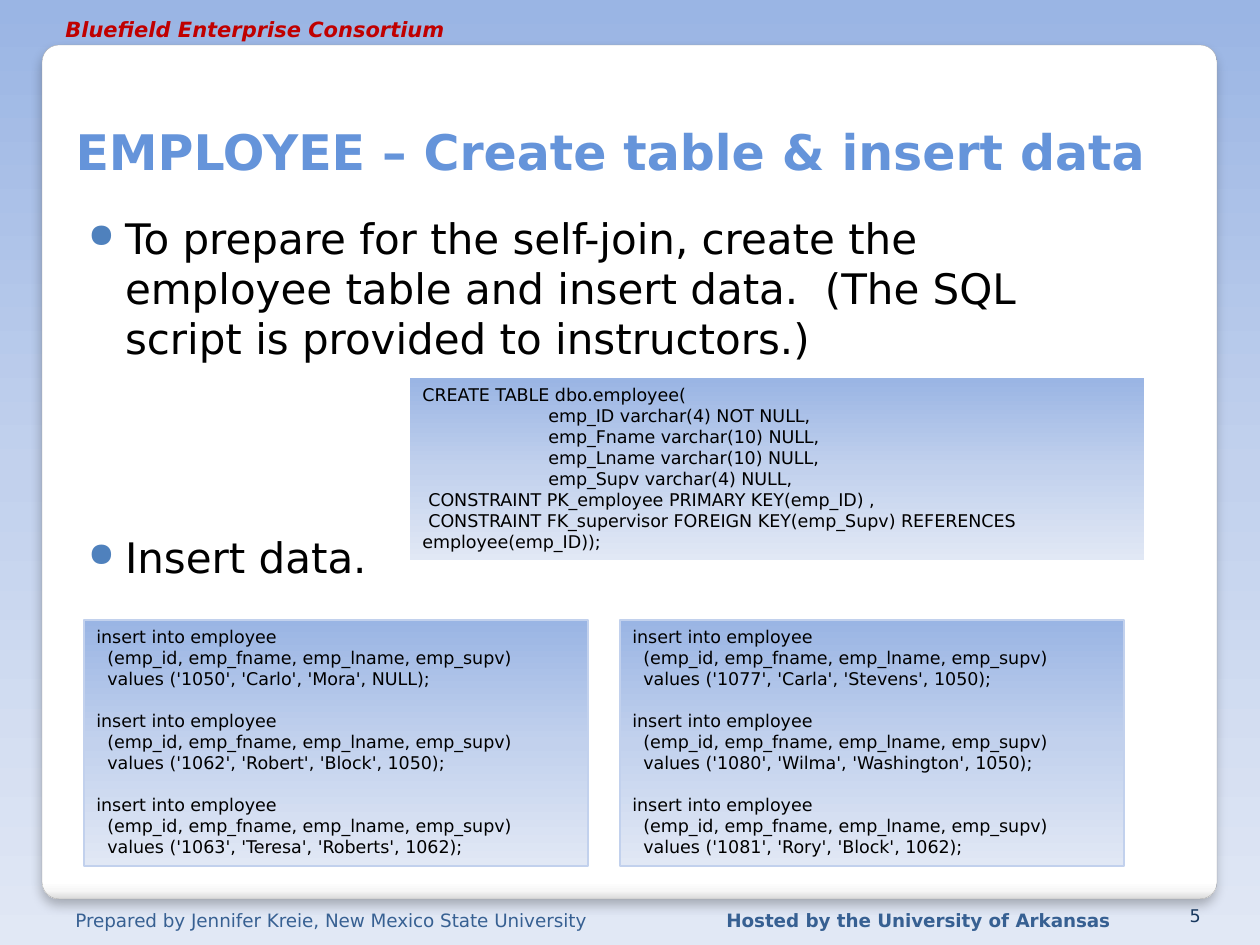
from dataclasses import dataclass

from lxml.etree import SubElement
from pptx import Presentation
from pptx.dml.color import RGBColor
from pptx.enum.shapes import MSO_SHAPE
from pptx.enum.text import MSO_ANCHOR, PP_ALIGN
from pptx.oxml.ns import qn
from pptx.util import Emu, Pt

PX = 914400 / 126
FONT = "DejaVu Sans"
COLORS = {
    "text": "000000",
    "title": "6594DA",
    "header": "C00000",
    "footer": "376092",
    "number": "17375E",
    "bullet": "4F81BD",
    "card_line": "A4A4A4",
    "box_line": "C2D1ED",
}
SKY = [(0, "9AB5E4"), (50, "C2D1ED"), (100, "E1E8F5")]
PAPER = [(0, "FFFFFF"), (98, "FFFFFF"), (99, "F7F7F7"), (100, "DADADA")]


@dataclass
class Box:
    x: int
    y: int
    w: int
    h: int

    def emu(self) -> list[Emu]:
        return [px(v) for v in (self.x, self.y, self.w, self.h)]


@dataclass
class Label:
    text: str
    box: Box
    size: float
    color: str
    bold: bool = False
    italic: bool = False
    align: PP_ALIGN = PP_ALIGN.LEFT
    anchor: MSO_ANCHOR = MSO_ANCHOR.TOP


@dataclass
class Employee:
    id: str
    first: str
    last: str
    supervisor: str


LABELS = [
    Label("Prepared by Jennifer Kreie, New Mexico State University",
          Box(63, 903, 562, 29), 10.5, "footer"),
    Label("Hosted by the University of Arkansas",
          Box(714, 903, 420, 29), 10.5, "footer", bold=True),
    Label("Bluefield Enterprise Consortium",
          Box(53, 10, 420, 29), 12, "header", bold=True, italic=True),
    Label("5", Box(1150, 903, 63, 29), 10, "number",
          align=PP_ALIGN.RIGHT, anchor=MSO_ANCHOR.BOTTOM),
]
COLUMNS = [
    "emp_ID varchar(4) NOT NULL,",
    "emp_Fname varchar(10) NULL,",
    "emp_Lname varchar(10) NULL,",
    "emp_Supv varchar(4) NULL,",
]
CONSTRAINTS = [
    "CONSTRAINT PK_employee PRIMARY KEY(emp_ID) ,",
    "CONSTRAINT FK_supervisor FOREIGN KEY(emp_Supv) REFERENCES employee(emp_ID));",
]
EMPLOYEES = [
    Employee("1050", "Carlo", "Mora", "NULL"),
    Employee("1062", "Robert", "Block", "1050"),
    Employee("1063", "Teresa", "Roberts", "1062"),
    Employee("1077", "Carla", "Stevens", "1050"),
    Employee("1080", "Wilma", "Washington", "1050"),
    Employee("1081", "Rory", "Block", "1062"),
]
PER_BOX = 3


def px(value: float) -> Emu:
    return Emu(round(value * PX))


def rgb(name: str) -> RGBColor:
    return RGBColor.from_string(COLORS[name])


def write(tf, text: str, *, size: float = 10, color: str = "text", bold: bool = False,
          italic: bool = False, align: PP_ALIGN = PP_ALIGN.LEFT, before: float = 0,
          left: int = 0, first: int = 0, bullet: bool = False) -> None:
    p = tf.paragraphs[0] if not tf.paragraphs[0].runs else tf.add_paragraph()
    p.alignment = align
    p.space_before = Pt(before)
    pPr = p._p.get_or_add_pPr()
    pPr.set("marL", str(px(left)))
    pPr.set("indent", str(px(first)))
    if bullet:
        clr = SubElement(pPr, qn("a:buClr"))
        SubElement(clr, qn("a:srgbClr"), val=COLORS["bullet"])
        SubElement(pPr, qn("a:buSzPct"), val="80000")
        SubElement(pPr, qn("a:buChar"), char="●")
    r = p.add_run()
    r.text = text
    r.font.name = FONT
    r.font.size = Pt(size)
    r.font.bold = bold
    r.font.italic = italic
    r.font.color.rgb = rgb(color)


def fill_gradient(fill, element, stops: list[tuple[int, str]]) -> None:
    fill.gradient()
    fill.gradient_angle = 270
    gs_list = element.find(".//" + qn("a:gsLst"))
    for gs in list(gs_list):
        gs_list.remove(gs)
    for position, color in stops:
        gs = SubElement(gs_list, qn("a:gs"), pos=str(position * 1000))
        SubElement(gs, qn("a:srgbClr"), val=color)


def add_panel(s, box: Box, stops: list[tuple[int, str]], line: str | None = None,
              width: float = 0.75, kind: MSO_SHAPE = MSO_SHAPE.RECTANGLE):
    sp = s.shapes.add_shape(kind, *box.emu())
    sp.shadow.inherit = False
    fill_gradient(sp.fill, sp._element.spPr, stops)
    if line:
        sp.line.color.rgb = rgb(line)
        sp.line.width = Pt(width)
    else:
        sp.line.fill.background()
    sp.text_frame.word_wrap = True
    sp.text_frame.vertical_anchor = MSO_ANCHOR.TOP
    return sp


def add_text_frame(s, box: Box, anchor: MSO_ANCHOR = MSO_ANCHOR.TOP):
    tf = s.shapes.add_textbox(*box.emu()).text_frame
    tf.word_wrap = True
    tf.vertical_anchor = anchor
    return tf


def add_card(s) -> None:
    sp = add_panel(s, Box(42, 45, 1175, 854), PAPER, "card_line", 0.16,
                   MSO_SHAPE.ROUNDED_RECTANGLE)
    sp.adjustments[0] = 0.02
    effects = sp._element.spPr.find(qn("a:effectLst"))
    shadow = SubElement(effects, qn("a:outerShdw"), blurRad=str(Pt(6)), dist=str(Pt(4)),
                        dir="5400000", rotWithShape="0")
    clr = SubElement(shadow, qn("a:srgbClr"), val="000000")
    SubElement(clr, qn("a:alpha"), val="25000")
    s.shapes._spTree.insert(2, sp._element)


def add_title(s, text: str) -> None:
    sp = s.shapes.title
    sp.left, sp.top, sp.width, sp.height = Box(63, 42, 1128, 145).emu()
    sp.text_frame.vertical_anchor = MSO_ANCHOR.BOTTOM
    write(sp.text_frame, text, size=28, color="title", bold=True)


def add_body(s) -> None:
    tf = add_text_frame(s, Box(63, 199, 976, 672))
    tf.margin_left, tf.margin_top = px(25), px(13)
    bullet = dict(size=24, left=37, first=-37, bullet=True)
    write(tf, "To prepare for the self-join, create the employee table and insert data.  "
          "(The SQL script is provided to instructors.)", before=2.5, **bullet)
    write(tf, "Insert data.", before=96, **bullet)


def add_create_box(s) -> None:
    tf = add_panel(s, Box(410, 378, 734, 182), SKY).text_frame
    write(tf, "CREATE TABLE dbo.employee(")
    for column in COLUMNS:
        write(tf, column, left=126)
    for constraint in CONSTRAINTS:
        write(tf, constraint, first=6)


def add_insert_box(s, box: Box, employees: list[Employee]) -> None:
    tf = add_panel(s, box, SKY, "box_line").text_frame
    for i, e in enumerate(employees):
        write(tf, "insert into employee", before=12 if i else 0)
        write(tf, "(emp_id, emp_fname, emp_lname, emp_supv)", left=11)
        write(tf, f"values ('{e.id}', '{e.first}', '{e.last}', {e.supervisor});", left=11)


def main() -> None:
    prs = Presentation()
    prs.slide_width, prs.slide_height = px(1260), px(945)
    s = prs.slides.add_slide(prs.slide_layouts[5])
    fill_gradient(s.background.fill, s._element, SKY)
    add_card(s)
    for label in LABELS:
        tf = add_text_frame(s, label.box, label.anchor)
        write(tf, label.text, size=label.size, color=label.color, bold=label.bold,
              italic=label.italic, align=label.align)
    add_title(s, "EMPLOYEE – Create table & insert data")
    add_body(s)
    add_create_box(s)
    for i in range(0, len(EMPLOYEES), PER_BOX):
        box = Box(84 + i // PER_BOX * 536, 620, 504, 246)
        add_insert_box(s, box, EMPLOYEES[i:i + PER_BOX])
    prs.save("out.pptx")


if __name__ == "__main__":
    main()
